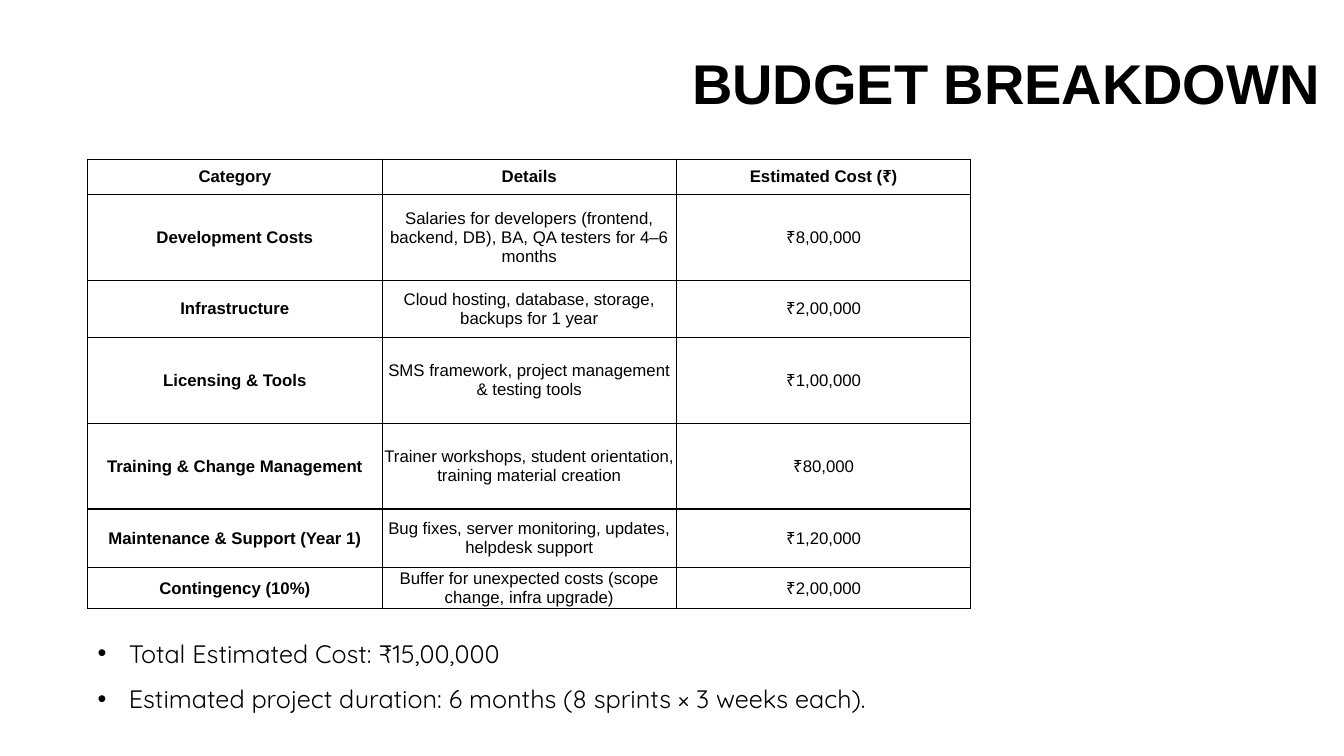
from lxml.etree import SubElement
from pptx import Presentation
from pptx.dml.color import RGBColor
from pptx.enum.text import MSO_ANCHOR, MSO_AUTO_SIZE, PP_ALIGN
from pptx.oxml import parse_xml
from pptx.oxml.ns import nsdecls, qn
from pptx.util import Inches, Pt

INK = "000000"
PAPER = "FFFFFF"
MARGIN = 0.87
COLUMN_WIDTH = 2.92
ROW_HEIGHTS = [0.35, 0.85, 0.57, 0.85, 0.85, 0.58, 0.41]
TABLE_TOP = 1.58
BUDGET = [
    ("Category", "Details", "Estimated Cost (₹)"),
    ("Development Costs", "Salaries for developers (frontend, backend, DB), BA, QA testers for 4–6 months", "₹8,00,000"),
    ("Infrastructure", "Cloud hosting, database, storage, backups for 1 year", "₹2,00,000"),
    ("Licensing & Tools", "SMS framework, project management & testing tools", "₹1,00,000"),
    ("Training & Change Management", "Trainer workshops, student orientation, training material creation", "₹80,000"),
    ("Maintenance & Support (Year 1)", "Bug fixes, server monitoring, updates, helpdesk support", "₹1,20,000"),
    ("Contingency (10%)", "Buffer for unexpected costs (scope change, infra upgrade)", "₹2,00,000"),
]
SUMMARY = [
    ("Total Estimated Cost: ₹15,00,000", 1.0),
    ("Estimated project duration: 6 months (8 sprints × 3 weeks each).", 1.5),
]


def color(value):
    return RGBColor.from_string(value)


def write(paragraph, text, **formats):
    run = paragraph.add_run()
    run.text = text
    for name, value in formats.items():
        setattr(run.font, name, value)
    run.font.color.rgb = color(INK)


presentation = Presentation()
presentation.slide_width = Inches(13.33)
presentation.slide_height = Inches(7.5)
slide = presentation.slides.add_slide(presentation.slide_layouts[6])
slide.background.fill.solid()
slide.background.fill.fore_color.rgb = color(PAPER)

title = slide.shapes.add_textbox(Inches(3.79), Inches(0.14), Inches(9.4), Inches(1.44))
title.text_frame.word_wrap = True
title.text_frame.vertical_anchor = MSO_ANCHOR.MIDDLE
paragraph = title.text_frame.paragraphs[0]
paragraph.alignment = PP_ALIGN.RIGHT
paragraph.line_spacing = 0.9
write(paragraph, "BUDGET BREAKDOWN", name="Arial", size=Pt(40), bold=True)

frame = slide.shapes.add_table(
    len(BUDGET), len(BUDGET[0]), Inches(MARGIN), Inches(TABLE_TOP),
    Inches(COLUMN_WIDTH * len(BUDGET[0])), Inches(sum(ROW_HEIGHTS)),
)
table = frame.table
table.first_row = table.horz_banding = False
for column in table.columns:
    column.width = Inches(COLUMN_WIDTH)

cell_format = {
    "margin_left": 0, "margin_right": 0, "margin_top": 0, "margin_bottom": 0,
    "vertical_anchor": MSO_ANCHOR.MIDDLE,
}
for row_index, (height, texts) in enumerate(zip(ROW_HEIGHTS, BUDGET)):
    table.rows[row_index].height = Inches(height)
    for column_index, text in enumerate(texts):
        cell = table.cell(row_index, column_index)
        for name, value in cell_format.items():
            setattr(cell, name, value)
        cell.fill.solid()
        cell.fill.fore_color.rgb = color(PAPER)
        for position, side in enumerate("LRTB"):
            cell._tc.get_or_add_tcPr().insert(position, parse_xml(
                f'<a:ln{side} {nsdecls("a")} w="{Pt(1)}"><a:solidFill>'
                f'<a:srgbClr val="{INK}"/></a:solidFill></a:ln{side}>'
            ))
        paragraph = cell.text_frame.paragraphs[0]
        paragraph.alignment = PP_ALIGN.CENTER
        write(paragraph, text, name="Arial", size=Pt(12), bold=row_index == 0 or column_index == 0)

summary = slide.shapes.add_textbox(Inches(MARGIN), Inches(6.28), Inches(9.34), Inches(1.16))
summary.text_frame.word_wrap = True
summary.text_frame.auto_size = MSO_AUTO_SIZE.SHAPE_TO_FIT_TEXT
for index, (text, spacing) in enumerate(SUMMARY):
    paragraph = summary.text_frame.add_paragraph() if index else summary.text_frame.paragraphs[0]
    paragraph.line_spacing = spacing
    properties = paragraph._p.get_or_add_pPr()
    properties.set("marL", str(Inches(0.31)))
    properties.set("indent", str(-Inches(0.31)))
    SubElement(properties, qn("a:buFont"), typeface="Arial")
    SubElement(properties, qn("a:buChar"), char="•")
    write(paragraph, text, name="Quicksand", size=Pt(18))

presentation.save("out.pptx")
